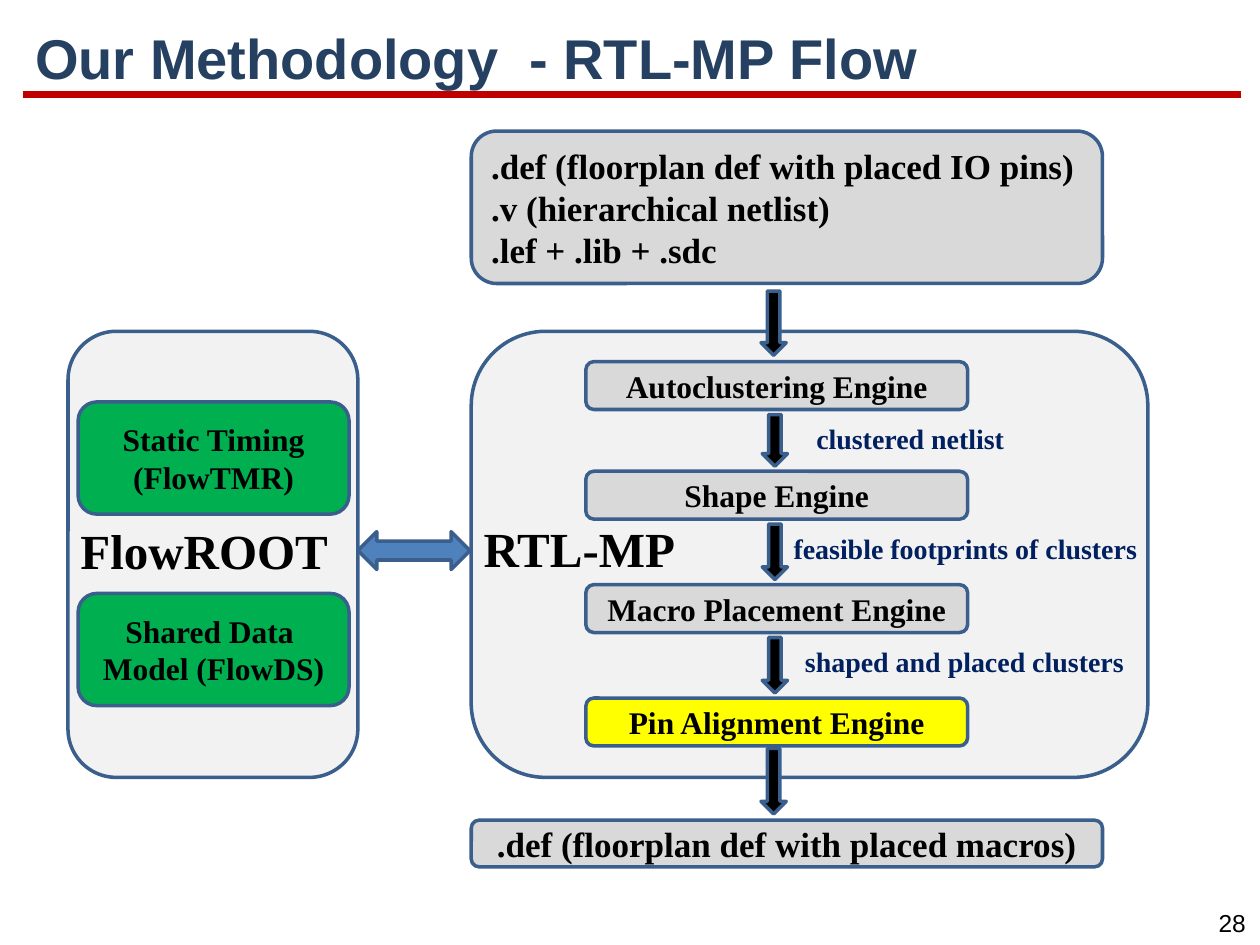
from collections import namedtuple

from pptx import Presentation
from pptx.dml.color import RGBColor
from pptx.enum.shapes import MSO_CONNECTOR, MSO_SHAPE as Preset
from pptx.enum.text import MSO_ANCHOR as Anchor, PP_ALIGN as Align
from pptx.oxml.ns import qn
from pptx.util import Inches, Pt

COLORS = {
    "title": "254061", "rule": "C00000", "outline": "3A5F8C",
    "panel": "F2F2F2", "file": "D9D9D9", "engine": "D9D9D9",
    "highlight": "FFFF00", "service": "00B050", "exchange": "4F81BD",
    "ink": "000000", "note": "002060",
}
SERIF, SANS = "Times New Roman", "Arial"
Box = namedtuple("Box", "left top width height")


def color(name):
    """Return the named palette colour."""
    return RGBColor.from_string(COLORS[name])


def inside(box, left, top, width, height):
    """Return a box offset from the corner of another box."""
    return Box(box.left + left, box.top + top, width, height)


def write(frame, lines, size, ink="ink", font=SERIF, bold=True,
          align=Align.LEFT, anchor=Anchor.TOP, wrap=True, spacing=1.0):
    """Fill a text frame with one paragraph for each line."""
    frame.word_wrap = wrap
    frame.vertical_anchor = anchor
    for index, line in enumerate(lines):
        paragraph = frame.paragraphs[0] if index == 0 else frame.add_paragraph()
        paragraph.alignment = align
        paragraph.line_spacing = spacing
        run = paragraph.add_run()
        run.text = line
        run.font.name, run.font.size, run.font.bold = font, Pt(size), bold
        run.font.color.rgb = color(ink)


def add_label(slide, box, text, size, **style):
    """Place a line of free text."""
    label = slide.shapes.add_textbox(*map(Inches, box))
    write(label.text_frame, [text], size, **style)


def add_block(slide, box, fill, lines=(), size=18, align=Align.CENTER,
              preset=Preset.ROUNDED_RECTANGLE):
    """Place an outlined shape with optional centred lines."""
    block = slide.shapes.add_shape(preset, *map(Inches, box))
    block.shadow.inherit = False
    block.fill.solid()
    block.fill.fore_color.rgb = color(fill)
    block.line.color.rgb = color("outline")
    block.line.width = Pt(2)
    write(block.text_frame, lines, size, align=align, anchor=Anchor.MIDDLE)


def add_flow_arrow(slide, box):
    """Place a black downward arrow."""
    add_block(slide, box, "ink", preset=Preset.DOWN_ARROW)


def add_header(slide, box):
    """Place the title above its red rule."""
    rule_y = Inches(box.top + 0.59)
    rule = slide.shapes.add_connector(
        MSO_CONNECTOR.STRAIGHT, Inches(box.left), rule_y,
        Inches(box.left + 9.67), rule_y)
    rule.line.color.rgb = color("rule")
    rule.line.width = Pt(4.5)
    properties = rule._element.spPr
    properties.append(properties.makeelement(qn("a:effectLst"), {}))
    add_label(slide, box, "Our Methodology  - RTL-MP Flow", 32, ink="title",
              font=SANS, anchor=Anchor.MIDDLE, spacing=0.9)


def add_platform(slide, box):
    """Place the platform panel with its two services."""
    add_block(slide, box, "panel")
    services = [(0.56, ["Static Timing", "(FlowTMR)"]),
                (2.08, ["Shared Data ", "Model (FlowDS)"])]
    for top, lines in services:
        add_block(slide, inside(box, 0.08, top, 2.15, 0.89), "service", lines)
    add_label(slide, inside(box, 0, 1.45, box.width, 0.57), "FlowROOT", 28)


def add_placer(slide, box):
    """Place the RTL-MP panel with its chain of engines."""
    add_block(slide, box, "panel")
    engines = [(0.24, "Autoclustering Engine", "engine"),
               (1.11, "Shape Engine", "engine"),
               (2.01, "Macro Placement Engine", "engine"),
               (2.91, "Pin Alignment Engine", "highlight")]
    height = 0.38
    for top, name, fill in engines:
        add_block(slide, inside(box, 0.91, top, 3.03, height), fill, [name])
    notes = [(2.64, 1.72, "clustered netlist"),
             (2.46, 3.16, "feasible footprints of clusters"),
             (2.55, 3.02, "shaped and placed clusters")]
    for engine, following, note in zip(engines, engines[1:], notes):
        start, end = engine[0] + height + 0.04, following[0] - 0.04
        add_flow_arrow(slide, inside(box, 2.31, start, 0.2, end - start))
        left, width, text = note
        add_label(slide, inside(box, left, start + 0.01, width, 0.37),
                  text, 16, ink="note", wrap=False)
    add_label(slide, inside(box, 0, 1.44, 1.95, 0.57), "RTL-MP", 28)


def add_files(slide, source, result):
    """Place the input and output files with their arrows."""
    add_block(slide, source, "file",
              [".def (floorplan def with placed IO pins)",
               ".v (hierarchical netlist)", ".lef + .lib + .sdc"],
              20, Align.LEFT)
    add_block(slide, result, "file",
              [".def (floorplan def with placed macros)"], 20)
    add_flow_arrow(slide, inside(source, 2.3, source.height + 0.06, 0.2, 0.51))
    add_flow_arrow(slide, inside(result, 2.3, -0.57, 0.2, 0.52))


def main():
    """Build the flow slide and save it."""
    deck = Presentation()
    deck.slide_width, deck.slide_height = Inches(10), Inches(7.5)
    slide = deck.slides.add_slide(deck.slide_layouts[6])
    platform = Box(0.54, 2.63, 2.3, 3.54)
    placer = Box(3.74, 2.63, 5.37, 3.54)
    add_header(slide, Box(0.18, 0.16, 9.68, 0.65))
    add_platform(slide, platform)
    add_placer(slide, placer)
    add_block(slide, inside(platform, platform.width, 1.59, 0.89, 0.3),
              "exchange", preset=Preset.LEFT_RIGHT_ARROW)
    add_files(slide, Box(3.74, 1.04, 5.01, 1.21), Box(3.74, 6.51, 5.01, 0.37))
    add_label(slide, Box(9.56, 7.16, 0.44, 0.34), "28", 14, font=SANS,
              bold=False, align=Align.CENTER, wrap=False)
    deck.save("out.pptx")


if __name__ == "__main__":
    main()
